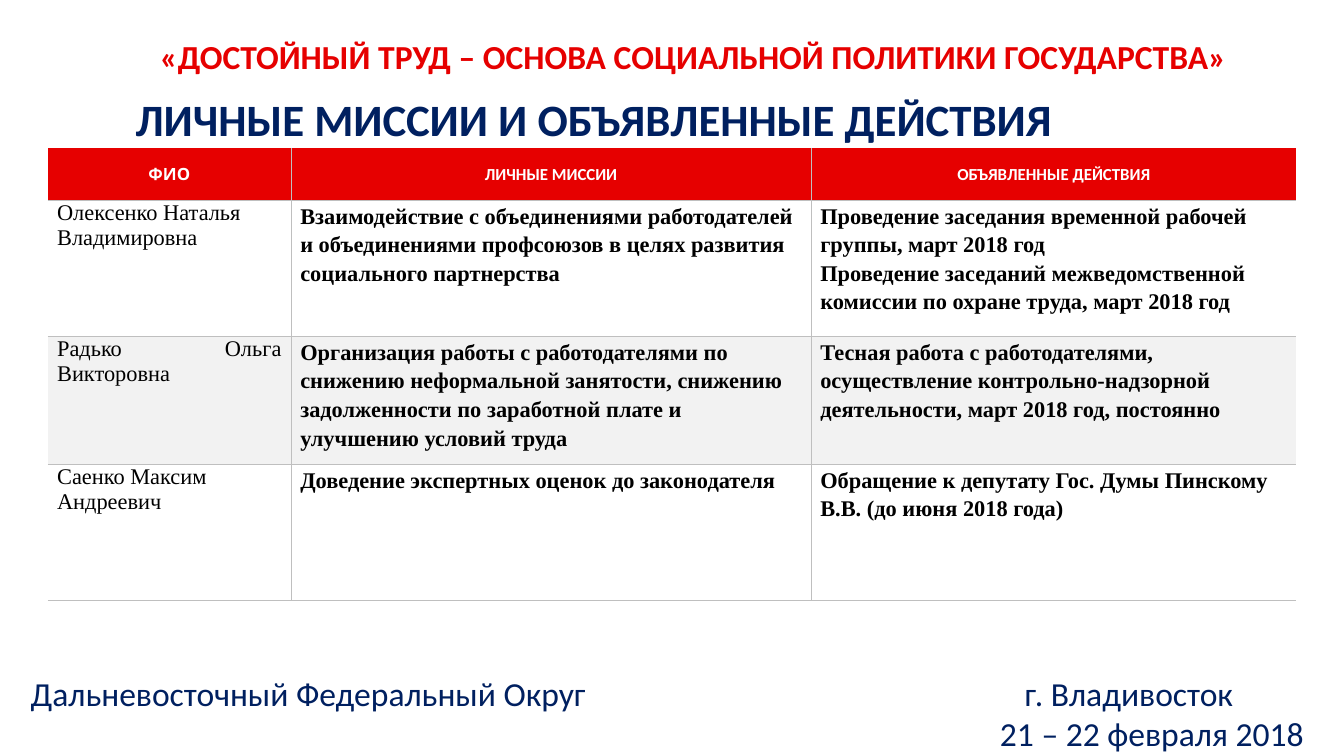
from lxml.etree import SubElement
from pptx import Presentation
from pptx.dml.color import RGBColor
from pptx.enum.text import MSO_ANCHOR as Anchor, MSO_AUTO_SIZE as AutoSize, PP_ALIGN as Align
from pptx.oxml.ns import qn
from pptx.util import Pt

COLORS = {
    "red": "E60000",
    "navy": "002060",
    "white": "FFFFFF",
    "black": "000000",
    "band": "F2F2F2",
    "border": "BFBFBF",
}
COLUMN_WIDTHS = [130.3, 278.6, 260]
ROW_HEIGHTS = [28, 73, 68.4, 73]
HEADERS = [
    ("ФИО", "Cabin"),
    ("ЛИЧНЫЕ МИССИИ", "Calibri"),
    ("ОБЪЯВЛЕННЫЕ ДЕЙСТВИЯ", "Calibri"),
]
PEOPLE = [
    (
        "Олексенко Наталья Владимировна",
        "Взаимодействие с объединениями работодателей и объединениями "
        "профсоюзов в целях развития социального партнерства",
        "Проведение заседания временной рабочей группы, март 2018 год\n"
        "Проведение заседаний межведомственной комиссии по охране труда, март 2018 год",
    ),
    (
        "Радько Ольга Викторовна",
        "Организация работы с работодателями по снижению неформальной занятости, "
        "снижению задолженности по заработной плате и улучшению условий труда",
        "Тесная работа с работодателями, осуществление контрольно-надзорной "
        "деятельности, март 2018 год, постоянно",
    ),
    (
        "Саенко Максим Андреевич",
        "Доведение экспертных оценок до законодателя",
        "Обращение к депутату Гос. Думы Пинскому В.В. (до июня 2018 года)",
    ),
]


def write_text(frame, text, *, size, color, font="Calibri", bold=False,
               align=Align.LEFT, spacing=None):
    for index, line in enumerate(text.split("\n")):
        para = frame.paragraphs[0] if index == 0 else frame.add_paragraph()
        para.alignment = align
        if spacing:
            para.line_spacing = spacing
        span = para.add_run()
        span.text = line
        span.font.size = Pt(size)
        span.font.name = font
        span.font.bold = bold
        span.font.color.rgb = RGBColor.from_string(COLORS[color])


def add_text(page, text, left, top, width, height, *, anchor=Anchor.MIDDLE,
             wrap=True, **style):
    box = page.shapes.add_textbox(Pt(left), Pt(top), Pt(width), Pt(height))
    frame = box.text_frame
    frame.word_wrap = wrap
    frame.auto_size = AutoSize.NONE if wrap else AutoSize.SHAPE_TO_FIT_TEXT
    frame.vertical_anchor = anchor
    write_text(frame, text, **style)
    return frame


def add_tab_stop(para, position):
    tabs = SubElement(para._p.get_or_add_pPr(), qn("a:tabLst"))
    SubElement(tabs, qn("a:tab"), pos=str(Pt(position)), algn="l")


def set_borders(cell, sides):
    properties = cell._tc.get_or_add_tcPr()
    for side in "LRTB":
        line = SubElement(properties, qn(f"a:ln{side}"), w=str(Pt(0.5)))
        if side in sides:
            fill = SubElement(line, qn("a:solidFill"))
            SubElement(fill, qn("a:srgbClr"), val=COLORS["border"])
        else:
            SubElement(line, qn("a:noFill"))


def format_cell(cell, text, sides, *, fill=None, anchor=Anchor.TOP, padding=0, **style):
    set_borders(cell, sides)
    if fill:
        cell.fill.solid()
        cell.fill.fore_color.rgb = RGBColor.from_string(COLORS[fill])
    else:
        cell.fill.background()
    cell.margin_left = cell.margin_right = Pt(5)
    cell.margin_top = cell.margin_bottom = Pt(padding)
    cell.vertical_anchor = anchor
    write_text(cell.text_frame, text, **style)


def add_missions_table(page):
    table = page.shapes.add_table(
        len(ROW_HEIGHTS), len(COLUMN_WIDTHS), Pt(25.6), Pt(79.4),
        Pt(sum(COLUMN_WIDTHS)), Pt(sum(ROW_HEIGHTS))).table
    table.first_row = table.horz_banding = False
    for column, width in zip(table.columns, COLUMN_WIDTHS):
        column.width = Pt(width)
    for row, height in zip(table.rows, ROW_HEIGHTS):
        row.height = Pt(height)

    column_sides = ["R", "LR", "L"]
    for column, (text, font) in enumerate(HEADERS):
        format_cell(table.cell(0, column), text, column_sides[column] + "B",
                    fill="red", anchor=Anchor.MIDDLE, padding=2.2, size=9,
                    color="white", font=font, bold=True, align=Align.CENTER)
    for row, person in enumerate(PEOPLE, start=1):
        banded = row == 2
        for column, text in enumerate(person):
            is_name = column == 0
            format_cell(table.cell(row, column), text, column_sides[column] + "TB",
                        fill="band" if banded else None, size=12, color="black",
                        font="Times New Roman", bold=not is_name,
                        align=Align.JUSTIFY if is_name and banded else Align.LEFT,
                        spacing=None if is_name else 1.15)


def main():
    deck = Presentation()
    deck.slide_width, deck.slide_height = Pt(720), Pt(405)
    page = deck.slides.add_slide(deck.slide_layouts[6])
    add_missions_table(page)
    add_text(page, "ЛИЧНЫЕ МИССИИ И ОБЪЯВЛЕННЫЕ ДЕЙСТВИЯ", 65.5, 45.4, 510.5, 36,
             anchor=Anchor.TOP, wrap=False, size=24, color="navy", bold=True)
    footer = add_text(page, "Дальневосточный Федеральный Округ\tг. Владивосток\n21 – 22 февраля 2018",
                      9.4, 365.8, 696.2, 32.4, size=18, color="navy")
    add_tab_stop(footer.paragraphs[0], 532.5)
    footer.paragraphs[1].alignment = Align.RIGHT
    add_text(page, "«ДОСТОЙНЫЙ ТРУД – ОСНОВА СОЦИАЛЬНОЙ ПОЛИТИКИ ГОСУДАРСТВА»",
             65.5, 19.4, 612, 21.6, size=18, color="red", bold=True, align=Align.CENTER)
    deck.save("out.pptx")


if __name__ == "__main__":
    main()
